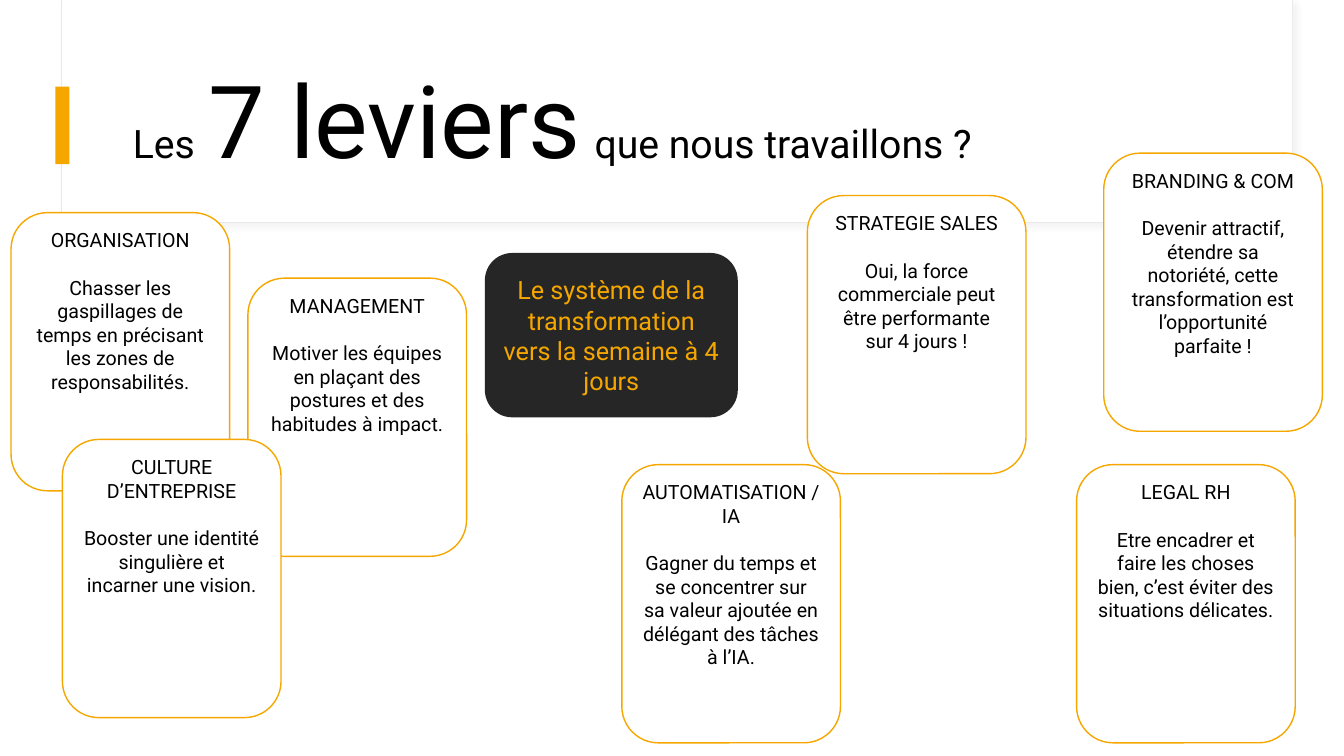
import pptx
import pptx.util
import pptx.dml.color
import pptx.enum.shapes
import pptx.enum.text
import pptx.oxml
from dataclasses import dataclass

Pt = pptx.util.Pt
RGB = pptx.dml.color.RGBColor.from_string
Shapes = pptx.enum.shapes.MSO_SHAPE
Anchor = pptx.enum.text.MSO_ANCHOR
Align = pptx.enum.text.PP_ALIGN


@dataclass(frozen=True)
class Theme:
    font: str = "Roboto"
    white: str = "FFFFFF"
    black: str = "000000"
    dark: str = "262626"
    accent: str = "F5A700"
    rule: str = "E9E9E9"
    shadow: str = "D9D9D9"
    title_large: int = 72
    title_gap: int = 40
    title_small: int = 28
    system: int = 18
    card: int = 14


theme = Theme()
deck = pptx.Presentation()
deck.slide_width, deck.slide_height = Pt(960), Pt(540)
page = deck.slides.add_slide(deck.slide_layouts[6])


def add_box(kind, left, top, width, height, fill, line=None, line_width=1):
    box = page.shapes.add_shape(kind, Pt(left), Pt(top), Pt(width), Pt(height))
    box.shadow.inherit = False
    box.fill.solid()
    box.fill.fore_color.rgb = RGB(fill)
    if line:
        box.line.color.rgb = RGB(line)
        box.line.width = Pt(line_width)
    else:
        box.line.fill.background()
    return box


def add_span(para, text, size, color):
    span = para.add_run()
    span.text = text
    span.font.name = theme.font
    span.font.size = Pt(size)
    span.font.color.rgb = RGB(color)


# Header panel with its soft shadow, and the accent bar
header = add_box(Shapes.RECTANGLE, 43.9, 0, 879.1, 159.1, theme.white, theme.rule, 0.75)
header.element.spPr.find(pptx.oxml.ns.qn("a:effectLst")).append(pptx.oxml.parse_xml(
    f'<a:outerShdw {pptx.oxml.ns.nsdecls("a")} blurRad="{Pt(4)}" dist="{Pt(3)}" dir="2700000">'
    f'<a:srgbClr val="{theme.shadow}"><a:alpha val="30000"/></a:srgbClr></a:outerShdw>'))
add_box(Shapes.RECTANGLE, 44.6, 0, 878.4, 158.4, theme.white)
add_box(Shapes.RECTANGLE, 39.6, 61.9, 10.1, 55.4, theme.accent)

# Title
title = page.shapes.add_textbox(Pt(87.8), Pt(43.2), Pt(800.6), Pt(92.9)).text_frame
title.word_wrap = True
title.vertical_anchor = Anchor.MIDDLE
title_para = title.paragraphs[0]
title_para.line_spacing = 0.9
for text, size in [
    ("Les", theme.title_small),
    (" ", theme.title_gap),
    ("7 leviers", theme.title_large),
    (" ", theme.title_gap),
    ("que nous travaillons ?", theme.title_small),
]:
    add_span(title_para, text, size, theme.black)

# The seven levers, from back to front: left, top, heading, message
levers = [
    (7.9, 151.9, "ORGANISATION",
     "Chasser les gaspillages de temps en précisant les zones de responsabilités."),
    (177.1, 198.7, "MANAGEMENT",
     "Motiver les équipes en plaçant des postures et des habitudes à impact."),
    (444.2, 331.9, "AUTOMATISATION / IA",
     "Gagner du temps et se concentrer sur sa valeur ajoutée en délégant des tâches à l’IA."),
    (44.6, 313.9, "CULTURE D’ENTREPRISE",
     "Booster une identité singulière et incarner une vision."),
    (769, 331.9, "LEGAL RH",
     "Etre encadrer et faire les choses bien, c’est éviter des situations délicates."),
    (576.7, 139.7, "STRATEGIE SALES",
     "Oui, la force commerciale peut être performante sur 4 jours !"),
    (788.4, 109.4, "BRANDING & COM",
     "Devenir attractif, étendre sa notoriété, cette transformation est l’opportunité parfaite !"),
]
for left, top, heading, message in levers:
    card = add_box(Shapes.ROUNDED_RECTANGLE, left, top, 156.2, 198.7, theme.white, theme.accent)
    frame = card.text_frame
    frame.word_wrap = True
    frame.vertical_anchor = Anchor.TOP
    heading_para, message_para = frame.paragraphs[0], frame.add_paragraph()
    heading_para.space_after = Pt(17)
    for para, text in [(heading_para, heading), (message_para, message)]:
        para.alignment = Align.CENTER
        add_span(para, text, theme.card, theme.black)

# Central system box
system = add_box(Shapes.ROUNDED_RECTANGLE, 346.3, 180.7, 180.7, 117.4, theme.dark).text_frame
system.word_wrap = True
system.vertical_anchor = Anchor.MIDDLE
system.paragraphs[0].alignment = Align.CENTER
add_span(system.paragraphs[0], "Le système de la transformation vers la semaine à 4 jours",
         theme.system, theme.accent)

deck.save("out.pptx")
